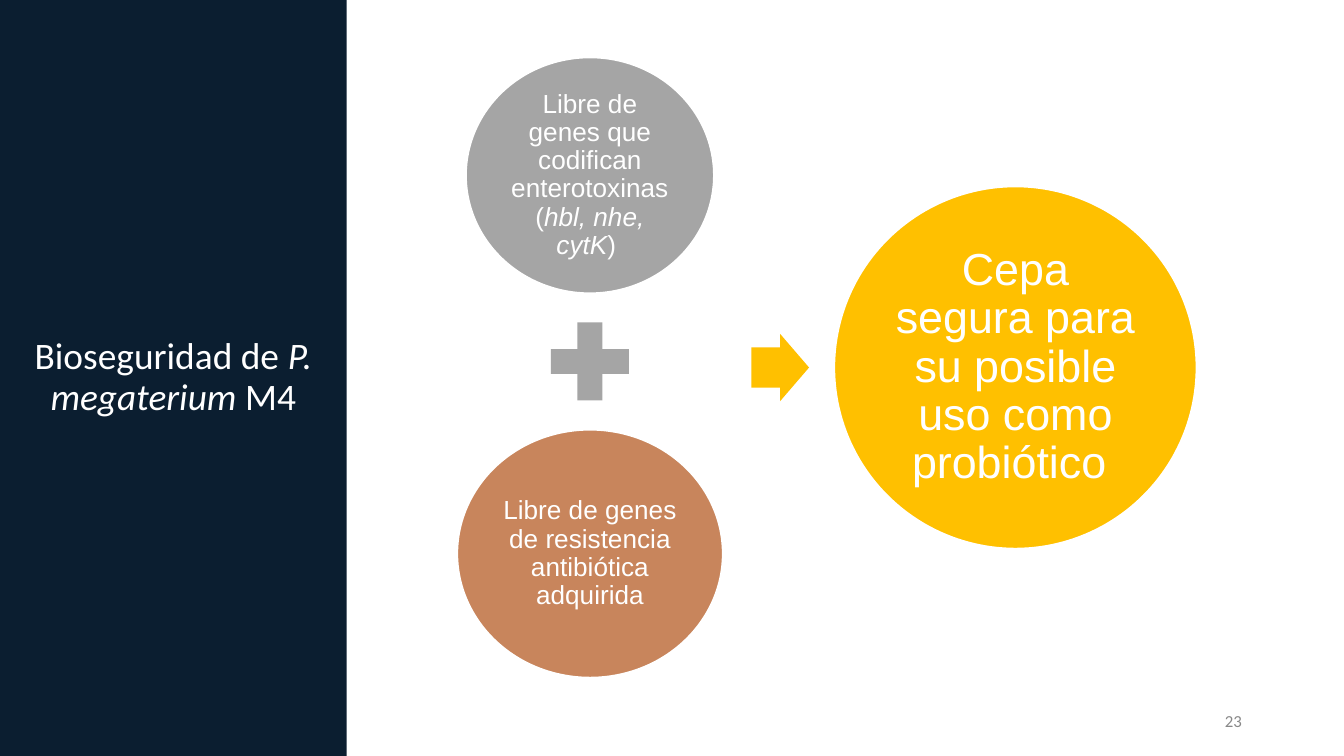
from dataclasses import dataclass

from pptx import Presentation
from pptx.dml.color import RGBColor
from pptx.enum.shapes import MSO_SHAPE
from pptx.enum.text import MSO_ANCHOR, MSO_AUTO_SIZE, PP_ALIGN
from pptx.util import Inches, Pt

OVAL, PLUS, ARROW = MSO_SHAPE.OVAL, MSO_SHAPE.MATH_PLUS, MSO_SHAPE.RIGHT_ARROW
CENTER, RIGHT = PP_ALIGN.CENTER, PP_ALIGN.RIGHT


@dataclass(frozen=True)
class Theme:
    navy: str = "0B1E30"
    gray: str = "A5A5A5"
    copper: str = "C8855C"
    gold: str = "FFC000"
    white: str = "FFFFFF"
    muted: str = "888888"
    heading: str = "Calibri"
    body: str = "Arial"
    title_size: int = 20
    cause_size: int = 14
    result_size: int = 24
    number_size: int = 9


T = Theme()
SLIDE_W = 10
SLIDE_H = SLIDE_W * 9 / 16

# Each run is (text, italic)
TITLE = [("Bioseguridad de ", False), ("P. megaterium ", True), ("M4", False)]
PAGE = [("23", False)]

# Left column, top to bottom: preset, width, height, fill, runs
CAUSES = [
    (OVAL, 1.86, 1.77, T.gray,
     [("Libre de genes que codifican enterotoxinas (", False),
      ("hbl, nhe, cytK", True), (") ", False)]),
    (PLUS, 0.79, 0.79, T.gray, []),
    (OVAL, 1.99, 1.86, T.copper,
     [("Libre de genes de resistencia antibiótica adquirida", False)]),
]
RESULT = [("Cepa segura para su posible uso como probiótico ", False)]

# Diagram grid
PANEL_W, PANEL_BLEED = 2.58, 0.01
CAUSE_X = 4.39
STACK_TOP, STACK_BOTTOM = 0.42, 5.05
MIDDLE_Y = (STACK_TOP + STACK_BOTTOM) / 2
ARROW_X, ARROW_W, ARROW_H = 5.59, 0.43, 0.5
RESULT_X, RESULT_D = 6.2, 2.71


def rgb(value):
    return RGBColor.from_string(value)


def write(sp, runs, size, font, color=T.white, align=CENTER, inset=0.03, spacing=0.9):
    tf = sp.text_frame
    tf.word_wrap = True
    tf.auto_size = MSO_AUTO_SIZE.NONE
    tf.vertical_anchor = MSO_ANCHOR.MIDDLE
    tf.margin_left = tf.margin_right = Inches(inset)
    tf.margin_top = tf.margin_bottom = Inches(inset)
    p = tf.paragraphs[0]
    p.alignment, p.line_spacing = align, spacing
    for text, italic in runs:
        r = p.add_run()
        r.text = text
        r.font.name, r.font.size, r.font.italic = font, Pt(size), italic
        r.font.color.rgb = rgb(color)


def place(sp, x, y, w, h):
    sp.left, sp.top, sp.width, sp.height = map(Inches, (x, y, w, h))


def add_solid(slide, preset, x, y, w, h, fill):
    sp = slide.shapes.add_shape(preset, *map(Inches, (x, y, w, h)))
    sp.shadow.inherit = False
    sp.fill.solid()
    sp.fill.fore_color.rgb = rgb(fill)
    if preset == OVAL:
        sp.line.color.rgb = rgb(T.white)
        sp.line.width = Pt(2)
    else:
        sp.line.fill.background()
    return sp


def add_title_panel(slide):
    title = slide.shapes.title
    place(title, 0, -PANEL_BLEED, PANEL_W, SLIDE_H + 2 * PANEL_BLEED)
    title.fill.solid()
    title.fill.fore_color.rgb = rgb(T.navy)
    write(title, TITLE, T.title_size, T.heading)


def add_causes(slide):
    total = sum(h for _, _, h, _, _ in CAUSES)
    gap = (STACK_BOTTOM - STACK_TOP - total) / (len(CAUSES) - 1)
    y = STACK_TOP
    for preset, w, h, fill, runs in CAUSES:
        sp = add_solid(slide, preset, CAUSE_X - w / 2, y, w, h, fill)
        if runs:
            write(sp, runs, T.cause_size, T.body, inset=0.02)
        y += h + gap


def add_result(slide):
    arrow = add_solid(slide, ARROW, ARROW_X, MIDDLE_Y - ARROW_H / 2,
                      ARROW_W, ARROW_H, T.gold)
    arrow.adjustments[0] = 0.6
    arrow.adjustments[1] = 0.5
    sp = add_solid(slide, OVAL, RESULT_X, MIDDLE_Y - RESULT_D / 2,
                   RESULT_D, RESULT_D, T.gold)
    write(sp, RESULT, T.result_size, T.body)


def main():
    prs = Presentation()
    prs.slide_width, prs.slide_height = Inches(SLIDE_W), Inches(SLIDE_H)
    slide = prs.slides.add_slide(prs.slide_layouts.get_by_name("Title Only"))
    add_title_panel(slide)
    number = slide.shapes.add_textbox(*map(Inches, (7.06, 5.21, 2.25, 0.3)))
    write(number, PAGE, T.number_size, T.heading, T.muted, RIGHT, 0.07, 1.0)
    add_causes(slide)
    add_result(slide)
    prs.save("out.pptx")


if __name__ == "__main__":
    main()
